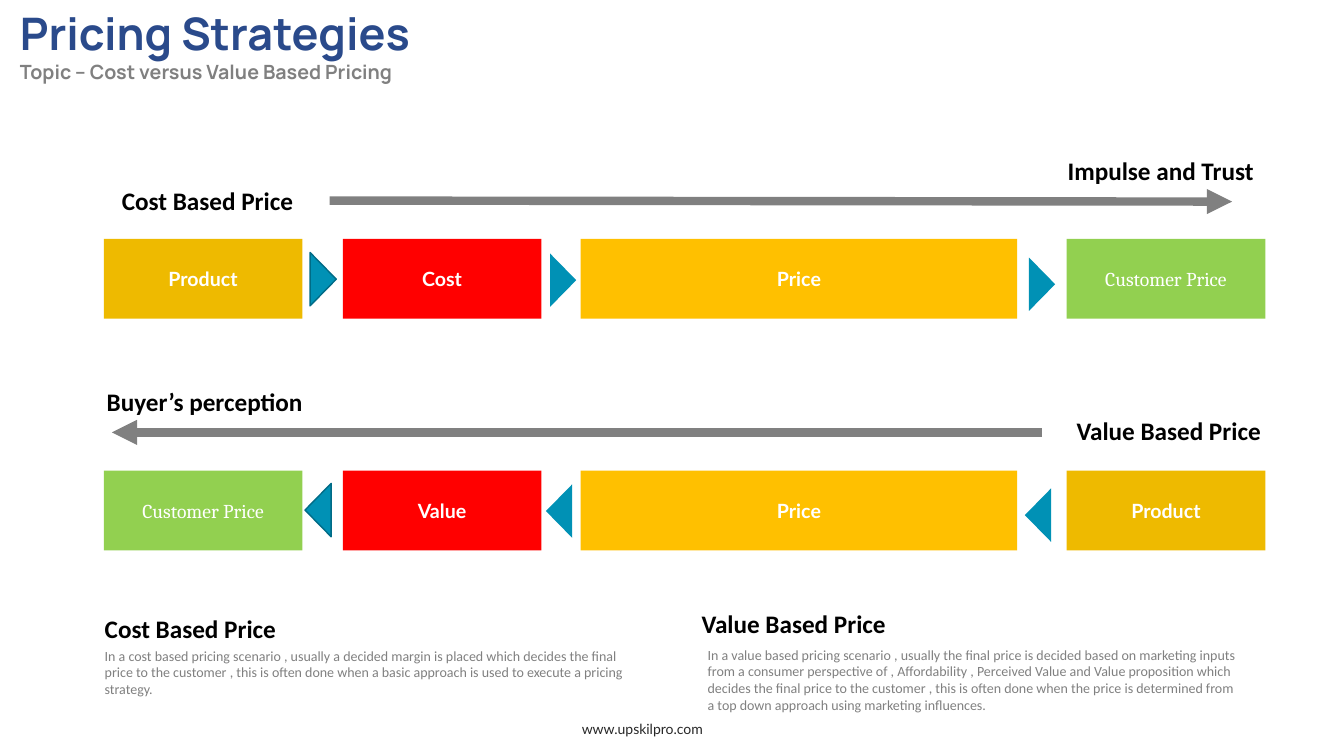
from lxml import etree
from pptx import Presentation
from pptx import util as u
from pptx.dml.color import RGBColor
from pptx.enum import shapes, text
from pptx.oxml import ns

WHITE = RGBColor(0xFF, 0xFF, 0xFF)
BLACK = RGBColor(0, 0, 0)
GREY = RGBColor(0x80, 0x80, 0x80)
DARK = RGBColor(0x27, 0x27, 0x27)
NAVY = RGBColor(0x2A, 0x4A, 0x8B)
RED = RGBColor(0xFF, 0, 0)
AMBER = RGBColor(0xFF, 0xC0, 0)
GOLD = RGBColor(0xEE, 0xBA, 0)
GREEN = RGBColor(0x92, 0xD0, 0x50)
TEAL = RGBColor(0, 0x91, 0xB5)
DEEP_TEAL = RGBColor(0, 0x6B, 0x86)

TITLE = {"name": "Manrope", "size": u.Pt(32), "bold": True, "color": NAVY}
SUBTITLE = {**TITLE, "size": u.Pt(14), "color": GREY}
HEADING = {"name": "Calibri", "size": u.Pt(18), "bold": True, "color": BLACK}
BODY = {"name": "Calibri", "size": u.Pt(10), "bold": False, "color": GREY}
STEP = {"name": "Lato", "size": u.Pt(14), "bold": True, "color": WHITE}
CUSTOMER = {**STEP, "name": "Cambria", "bold": False}
FOOTER = {"name": "Lato", "size": u.Pt(10), "bold": False, "color": DARK}

COLUMNS = [(1.03, 1.97), (3.4, 1.97), (5.76, 4.33), (10.58, 1.97)]
STEP_HEIGHT = 0.79
POINTER_SIZE = (0.53, 0.26)

PRODUCT_STEP = ("Product", GOLD, STEP)
PRICE_STEP = ("Price", AMBER, STEP)
CUSTOMER_STEP = ("Customer Price", GREEN, CUSTOMER)
FLOWS = [
    {
        "top": 4.67,
        "steps": [CUSTOMER_STEP, ("Value", RED, STEP), PRICE_STEP, PRODUCT_STEP],
        "rotation": 270,
        "pointers": [(2.89, 4.93), (5.28, 4.94), (10.03, 4.98)],
        "arrow": [(10.33, 4.29), (1.11, 4.29)],
    },
    {
        "top": 2.37,
        "steps": [PRODUCT_STEP, ("Cost", RED, STEP), PRICE_STEP, CUSTOMER_STEP],
        "rotation": 90,
        "pointers": [(2.94, 2.64), (5.32, 2.65), (10.07, 2.69)],
        "arrow": [(3.27, 1.99), (12.22, 2)],
    },
]

HEADINGS = [
    (10.58, 4.07, "Value Based Price"),
    (0.96, 3.78, "Buyer’s perception"),
    (1.11, 1.79, "Cost Based Price"),
    (10.49, 1.49, "Impulse and Trust"),
    (0.94, 6.04, "Cost Based Price"),
    (6.86, 5.99, "Value Based Price"),
]
COST_TEXT = (
    "In a cost based pricing scenario , usually a decided margin is placed which "
    "decides the final price to the customer , this is often done when a basic "
    "approach is used to execute a pricing strategy."
)
VALUE_TEXT = (
    "In a value based pricing scenario , usually the final price is decided based on "
    "marketing inputs from a consumer perspective of , Affordability , Perceived Value "
    "and Value proposition which decides the final price to the customer , this is "
    "often done when the price is determined from a top down approach using marketing "
    "influences."
)


class SlideBuilder:
    def __init__(self, page):
        self.page = page

    def add_lines(self, frame, lines, align):
        frame.word_wrap = True
        for index, (words, style) in enumerate(lines):
            para = frame.add_paragraph() if index else frame.paragraphs[0]
            para.alignment = align
            span = para.add_run()
            span.text = words
            for key, value in style.items():
                if key == "color":
                    span.font.color.rgb = value
                else:
                    setattr(span.font, key, value)

    def label(self, left, top, width, height, lines, align=text.PP_ALIGN.LEFT):
        box = self.page.shapes.add_textbox(*map(u.Inches, (left, top, width, height)))
        self.add_lines(box.text_frame, lines, align)

    def shape(self, kind, left, top, width, height, fill, outline=None):
        box = self.page.shapes.add_shape(kind, *map(u.Inches, (left, top, width, height)))
        box.shadow.inherit = False
        box.fill.solid()
        box.fill.fore_color.rgb = fill
        if outline is None:
            box.line.fill.background()
        else:
            box.line.color.rgb = outline
            box.line.width = u.Pt(1)
        return box

    def step(self, left, top, width, words, fill, style):
        box = self.shape(shapes.MSO_SHAPE.RECTANGLE, left, top, width, STEP_HEIGHT, fill)
        box.text_frame.vertical_anchor = text.MSO_ANCHOR.MIDDLE
        self.add_lines(box.text_frame, [(words, style)], text.PP_ALIGN.CENTER)

    def pointer(self, left, top, rotation, outline):
        box = self.shape(shapes.MSO_SHAPE.ISOSCELES_TRIANGLE, left, top, *POINTER_SIZE, TEAL, outline)
        box.rotation = rotation

    def arrow(self, start, end):
        arrow = self.page.shapes.add_connector(
            shapes.MSO_CONNECTOR.STRAIGHT, *map(u.Inches, (*start, *end))
        )
        arrow.line.color.rgb = GREY
        arrow.line.width = u.Pt(6)
        properties = arrow.element.spPr
        head = etree.SubElement(properties.find(ns.qn("a:ln")), ns.qn("a:tailEnd"))
        head.set("type", "triangle")
        etree.SubElement(properties, ns.qn("a:effectLst"))

    def flow(self, top, steps, rotation, pointers, arrow):
        for (left, width), (words, fill, style) in zip(COLUMNS, steps):
            self.step(left, top, width, words, fill, style)
        for index, (left, pointer_top) in enumerate(pointers):
            self.pointer(left, pointer_top, rotation, None if index else DEEP_TEAL)
        self.arrow(*arrow)


def main():
    deck = Presentation()
    deck.slide_width = u.Inches(13.33)
    deck.slide_height = u.Inches(7.5)
    builder = SlideBuilder(deck.slides.add_slide(deck.slide_layouts[6]))
    for flow in FLOWS:
        builder.flow(**flow)
    for left, top, words in HEADINGS:
        builder.label(left, top, 2.16, 0.4, [(words, HEADING)])
    builder.label(0.94, 6.37, 5.48, 0.61, [(COST_TEXT, BODY)])
    builder.label(6.92, 6.36, 5.48, 0.77, [(VALUE_TEXT, BODY)])
    title_lines = [
        ("Pricing Strategies", TITLE),
        ("Topic – Cost versus Value Based Pricing", SUBTITLE),
    ]
    builder.label(0.1, 0.01, 4.66, 0.88, title_lines)
    builder.label(4.12, 7.1, 4.5, 0.4, [("www.upskilpro.com", FOOTER)], text.PP_ALIGN.CENTER)
    deck.save("out.pptx")


if __name__ == "__main__":
    main()
